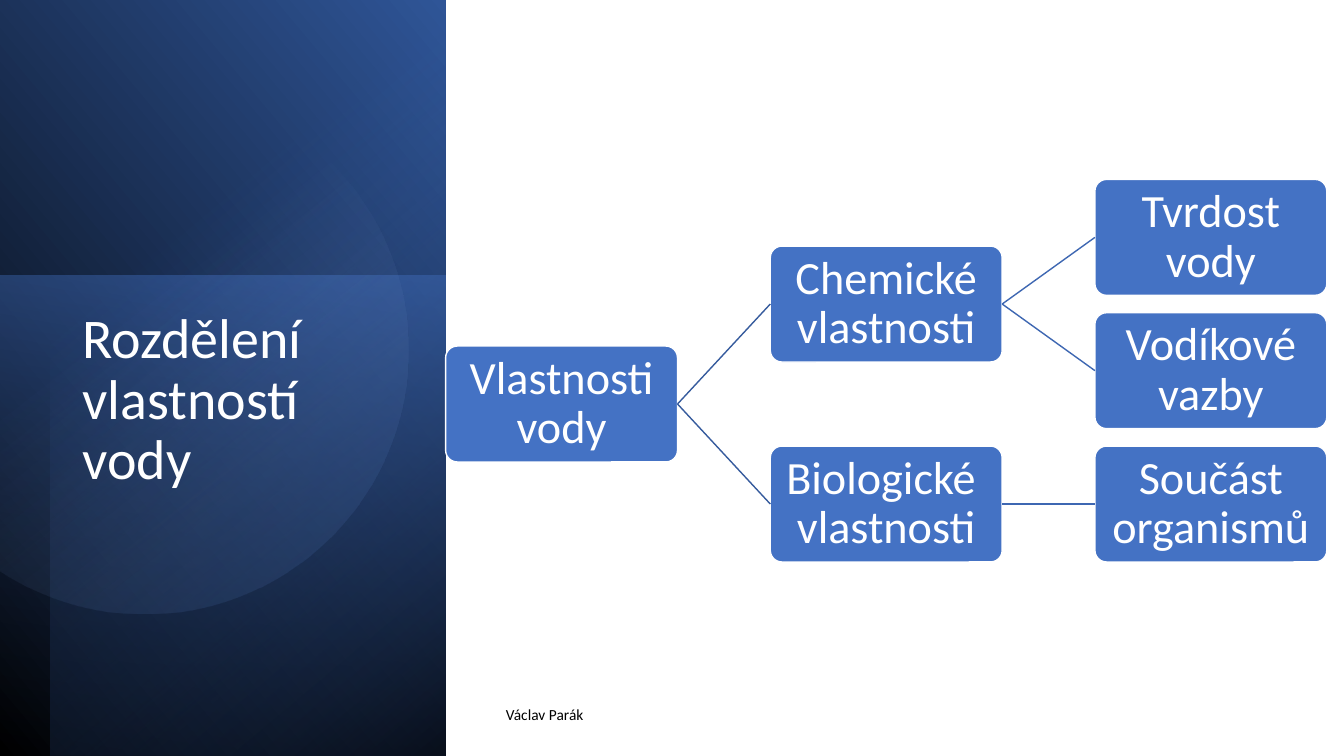
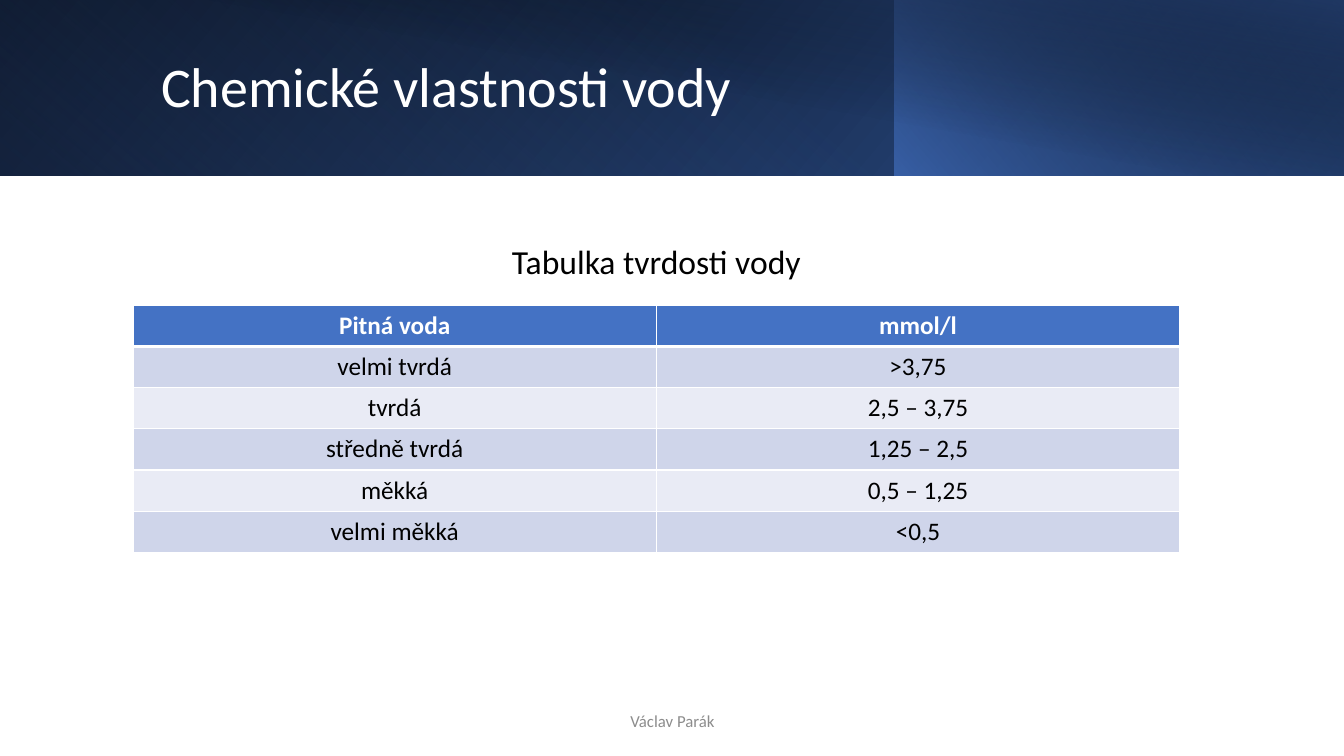
import math

import lxml.etree
import pptx
import pptx.dml.color
import pptx.enum.shapes
import pptx.enum.text
import pptx.oxml.ns
import pptx.util

RGBColor = pptx.dml.color.RGBColor
MSO_SHAPE = pptx.enum.shapes.MSO_SHAPE
ALIGN = pptx.enum.text.PP_ALIGN
ANCHOR = pptx.enum.text.MSO_ANCHOR
qn = pptx.oxml.ns.qn

EMU_PER_PX = 9144
SLIDE_W, SLIDE_H = 1333, 750
FONT = "Calibri"

BLACK = RGBColor(0x00, 0x00, 0x00)
WHITE = RGBColor(0xFF, 0xFF, 0xFF)
GRAY = RGBColor(0x8C, 0x8C, 0x8C)
BLUE = RGBColor(0x44, 0x72, 0xC4)
DARK_BLUE = RGBColor(0x2F, 0x55, 0x97)
NAVY = RGBColor(0x20, 0x38, 0x64)
PALE_BLUE = RGBColor(0x8F, 0xAA, 0xDC)
BRANCH_COLORS = [RGBColor(0x36, 0x5B, 0x9D), RGBColor(0x3E, 0x67, 0xB2)]
ROW_COLORS = [RGBColor(0xE9, 0xEB, 0xF5), RGBColor(0xCF, 0xD5, 0xEA)]

AUTHOR = "Václav Parák"
SIDE_W = 442
BAND_H = 174

NODE_W, NODE_H = 230, 115
LEVEL_STEP, LEAF_STEP = NODE_W * 1.4, NODE_H * 1.15
TREE_LEFT, TREE_TOP = 442, 178
PROPERTY_TREE = ("Vlastnosti vody", [
    ("Chemické vlastnosti", [("Tvrdost vody", []), ("Vodíkové vazby", [])]),
    ("Biologické  vlastnosti", [("Součást organismů", [])]),
])

HARDNESS = [
    ("Pitná voda", "mmol/l"),
    ("velmi tvrdá", ">3,75"),
    ("tvrdá", "2,5 – 3,75"),
    ("středně tvrdá", "1,25 – 2,5"),
    ("měkká", "0,5 – 1,25"),
    ("velmi měkká", "<0,5"),
]


def px(length):
    return pptx.util.Emu(round(length * EMU_PER_PX))


def box(*lengths):
    return [px(length) for length in lengths]


def write(frame, text, size, color, align=ALIGN.LEFT, bold=False, spacing=1.0):
    frame.text = text
    paragraph = frame.paragraphs[0]
    paragraph.alignment = align
    paragraph.line_spacing = spacing
    font = paragraph.runs[0].font
    font.name, font.size, font.bold = FONT, pptx.util.Pt(size), bold
    font.color.rgb = color


def add_text(slide, place, text, size, color, anchor=ANCHOR.TOP, **style):
    frame = slide.shapes.add_textbox(*box(*place)).text_frame
    frame.word_wrap = True
    frame.vertical_anchor = anchor
    write(frame, text, size, color, **style)


def add_title(slide, place, text, anchor=ANCHOR.TOP):
    add_text(slide, place, text, 40, WHITE, anchor, spacing=0.9)


def add_footer(slide, left, top, size, color, align=ALIGN.LEFT):
    add_text(slide, (left, top, 450, 40), AUTHOR, size, color, ANCHOR.MIDDLE, align=align)


def fade(shape, angle, stops):
    """Fill with two (position %, colour, opacity %) stops; the angle runs clockwise."""
    shape.shadow.inherit = False
    shape.line.fill.background()
    shape.fill.gradient()
    shape.fill.gradient_angle = 360 - angle
    for stop, (position, color, _) in zip(shape.fill.gradient_stops, stops):
        stop.position = position / 100
        stop.color.rgb = color
    for color_node, (_, _, opacity) in zip(shape.element.iter(qn("a:srgbClr")), stops):
        lxml.etree.SubElement(color_node, qn("a:alpha"), val=str(opacity * 1000))


def add_panel(slide, place, angle, *stops):
    fade(slide.shapes.add_shape(MSO_SHAPE.RECTANGLE, *box(*place)), angle, stops)


def arc_points(center_x, center_y, radius, turns):
    """Give the start, then two handles and an end for each arc between turns."""
    def spot(turn, lean=0):
        return (px(center_x + radius * (math.cos(turn) - lean * math.sin(turn))),
                px(center_y + radius * (math.sin(turn) + lean * math.cos(turn))))

    points = [spot(turns[0])]
    for start, end in zip(turns, turns[1:]):
        lean = 4 / 3 * math.tan((end - start) / 4)
        points += [spot(start, lean), spot(end, -lean), spot(end)]
    return points


def bend(shape):
    """Turn each three straight segments of the outline into one Bézier curve."""
    lines = list(shape.element.iter(qn("a:lnTo")))
    for first in range(0, len(lines), 3):
        curve = lxml.etree.Element(qn("a:cubicBezTo"))
        lines[first].addprevious(curve)
        for line in lines[first:first + 3]:
            curve.append(line[0])
            line.getparent().remove(line)


def add_disc(slide, center_x, center_y, radius, angle, *stops):
    """Draw a circle cut off by the left edge of the slide."""
    reach = math.acos(-center_x / radius)
    turns = [-reach, -math.pi / 2, 0, math.pi / 2, reach]
    start, *rest = arc_points(center_x, center_y, radius, turns)
    builder = slide.shapes.build_freeform(*start)
    builder.add_line_segments(rest, close=True)
    disc = builder.convert_to_shape()
    bend(disc)
    fade(disc, angle, stops)


def add_node(slide, left, top, text):
    node = slide.shapes.add_shape(MSO_SHAPE.ROUNDED_RECTANGLE, *box(left, top, NODE_W, NODE_H))
    node.adjustments[0] = 0.1
    node.shadow.inherit = False
    node.fill.solid()
    node.fill.fore_color.rgb = BLUE
    node.line.color.rgb = WHITE
    node.line.width = pptx.util.Pt(1)
    frame = node.text_frame
    frame.word_wrap = True
    frame.vertical_anchor = ANCHOR.MIDDLE
    frame.margin_left = frame.margin_right = frame.margin_top = frame.margin_bottom = px(5)
    write(frame, text, 33, WHITE, ALIGN.CENTER, spacing=0.9)
    return node


def add_branch(slide, parent, child, color):
    branch = slide.shapes.add_connector(pptx.enum.shapes.MSO_CONNECTOR.STRAIGHT, 0, 0, 0, 0)
    branch.begin_connect(parent, 3)
    branch.end_connect(child, 1)
    branch.line.color.rgb = color
    branch.line.width = pptx.util.Pt(1)
    lxml.etree.SubElement(branch.element.spPr, qn("a:effectLst"))


def count_leaves(tree):
    return sum(map(count_leaves, tree[1])) or 1


def add_tree(slide, tree, level=0, first_leaf=0):
    """Draw a tree to the right, each parent midway between its outer children."""
    text, subtrees = tree
    children = []
    leaf = first_leaf
    for subtree in subtrees:
        children.append(add_tree(slide, subtree, level + 1, leaf))
        leaf += count_leaves(subtree)
    if children:
        top = (children[0].top + children[-1].top) / 2 / EMU_PER_PX
    else:
        top = TREE_TOP + first_leaf * LEAF_STEP
    node = add_node(slide, TREE_LEFT + level * LEVEL_STEP, top, text)
    for child in children:
        add_branch(slide, node, child, BRANCH_COLORS[level])
    return node


def add_header_borders(cell):
    properties = cell._tc.get_or_add_tcPr()
    for side, width in (("L", 1), ("R", 1), ("T", 1), ("B", 3)):
        border = lxml.etree.SubElement(properties, qn("a:ln" + side), w=str(pptx.util.Pt(width)))
        fill = lxml.etree.SubElement(border, qn("a:solidFill"))
        lxml.etree.SubElement(fill, qn("a:srgbClr"), val=str(WHITE))


def add_hardness_table(slide, place):
    table = slide.shapes.add_table(len(HARDNESS), len(HARDNESS[0]), *box(*place)).table
    for row, texts in enumerate(HARDNESS):
        header = row == 0
        for column, text in enumerate(texts):
            cell = table.cell(row, column)
            if header:
                add_header_borders(cell)
            cell.fill.solid()
            cell.fill.fore_color.rgb = BLUE if header else ROW_COLORS[row % 2]
            write(cell.text_frame, text, 18, WHITE if header else BLACK, ALIGN.CENTER, header)


def build_overview(slide):
    glow_top = 273
    add_panel(slide, (0, 0, SIDE_W, SLIDE_H), 320, (0, BLACK, 100), (100, DARK_BLUE, 100))
    add_panel(slide, (0, glow_top, SIDE_W, SLIDE_H - glow_top), 100,
              (0, BLUE, 50), (100, NAVY, 0))
    add_panel(slide, (50, 0, SIDE_W - 50, SLIDE_H), 230, (0, BLACK, 59), (69, BLUE, 0))
    add_disc(slide, 143, 347, 262, 52, (39, PALE_BLUE, 0), (100, DARK_BLUE, 26))
    add_title(slide, (72, 303, 315, 336), "Rozdělení vlastností vody")
    add_footer(slide, 492, 689, 11, BLACK)
    add_tree(slide, PROPERTY_TREE)


def build_chemistry(slide):
    split = 887
    add_panel(slide, (0, 0, SLIDE_W, BAND_H), 40, (0, BLACK, 100), (100, DARK_BLUE, 100))
    add_panel(slide, (0, 0, split, BAND_H), 130, (20, BLUE, 0), (100, NAVY, 55))
    add_panel(slide, (split, 0, SLIDE_W - split, BAND_H), 320, (0, BLUE, 66), (100, BLACK, 30))
    add_panel(slide, (50, 0, SLIDE_W - 50, BAND_H), 280, (50, BLACK, 0), (99, NAVY, 52))
    add_title(slide, (150, 32, 1082, 113), "Chemické vlastnosti vody", ANCHOR.MIDDLE)
    add_hardness_table(slide, (132, 303, 1038, 245))
    add_text(slide, (215, 234, 872, 50), "Tabulka tvrdosti vody", 24, BLACK, align=ALIGN.CENTER)
    add_footer(slide, 442, 695, 12, GRAY, ALIGN.CENTER)


def main():
    deck = pptx.Presentation()
    deck.slide_width, deck.slide_height = box(SLIDE_W, SLIDE_H)
    for build in (build_overview, build_chemistry):
        build(deck.slides.add_slide(deck.slide_layouts[6]))
    deck.save("out.pptx")


if __name__ == "__main__":
    main()
